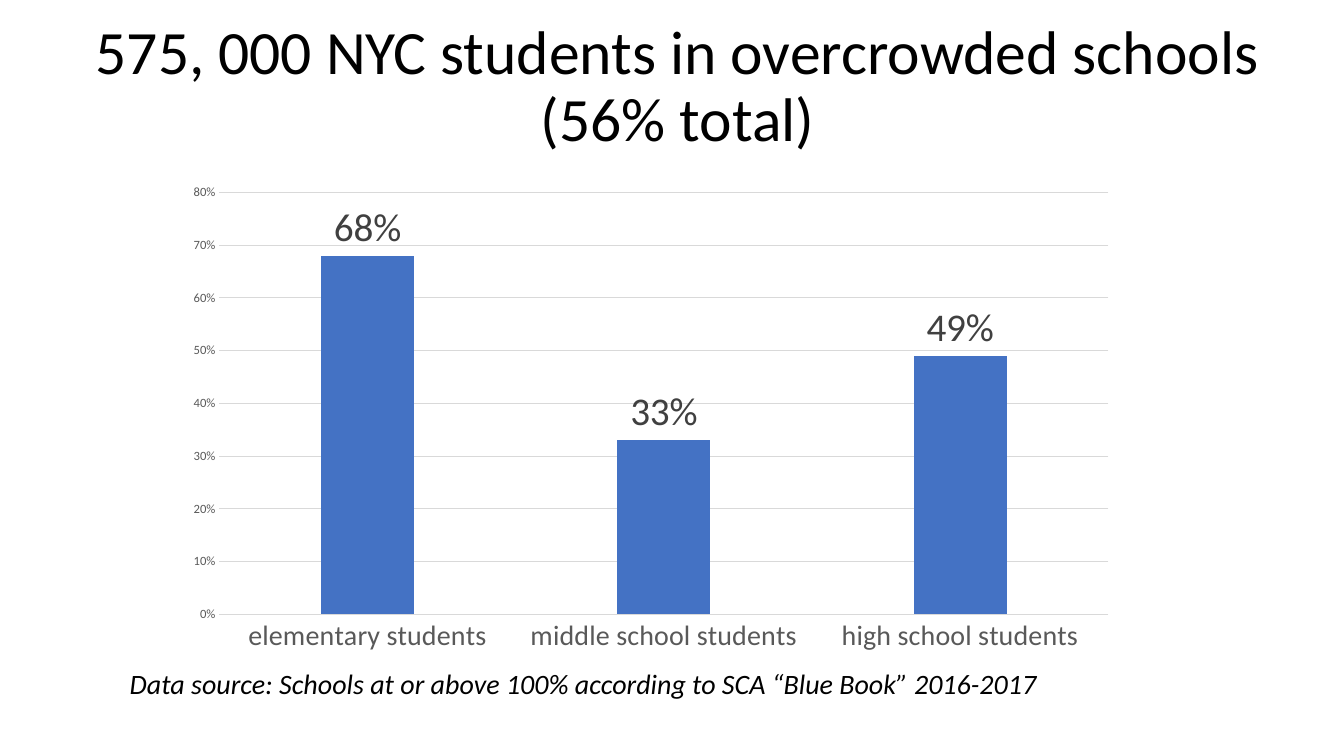
from pptx import Presentation
from pptx.chart.data import CategoryChartData
from pptx.dml.color import RGBColor
from pptx.enum.chart import XL_CHART_TYPE, XL_LABEL_POSITION, XL_TICK_MARK
from pptx.enum.shapes import MSO_SHAPE
from pptx.enum.text import MSO_ANCHOR, PP_ALIGN
from pptx.util import Cm, Pt

BLACK = RGBColor(0x00, 0x00, 0x00)
WHITE = RGBColor(0xFF, 0xFF, 0xFF)
BLUE = RGBColor(0x44, 0x72, 0xC4)
LABEL_GRAY = RGBColor(0x40, 0x40, 0x40)
AXIS_GRAY = RGBColor(0x59, 0x59, 0x59)
GRID_GRAY = RGBColor(0xD9, 0xD9, 0xD9)


class SlideBuilder:
    typeface = "Calibri"

    def __init__(self, slide):
        self.slide = slide

    def style_font(self, font, size, color):
        font.name = self.typeface
        font.size = Pt(size)
        font.color.rgb = color

    def style_line(self, line, color):
        line.color.rgb = color
        line.width = Pt(0.75)

    def add_title(self, lines, left, top, width, height):
        box = self.slide.shapes.add_shape(
            MSO_SHAPE.RECTANGLE, Cm(left), Cm(top), Cm(width), Cm(height))
        box.shadow.inherit = False
        box.fill.background()
        self.style_line(box.line, WHITE)
        frame = box.text_frame
        frame.word_wrap = True
        frame.vertical_anchor = MSO_ANCHOR.MIDDLE
        para = frame.paragraphs[0]
        para.alignment = PP_ALIGN.CENTER
        para.line_spacing = 0.9
        self.style_font(para.font, 44, BLACK)
        for index, line in enumerate(lines):
            if index:
                para.add_line_break()
            span = para.add_run()
            span.text = line

    def add_source(self, text, left, top, width, height):
        box = self.slide.shapes.add_textbox(Cm(left), Cm(top), Cm(width), Cm(height))
        frame = box.text_frame
        frame.word_wrap = True
        frame.vertical_anchor = MSO_ANCHOR.BOTTOM
        frame.margin_bottom = Cm(0.8)
        para = frame.paragraphs[0]
        para.text = text
        para.line_spacing = 1.2
        self.style_font(para.font, 20, BLACK)
        para.font.italic = True

    def add_column_chart(self, shares, left, top, width, height):
        data = CategoryChartData(number_format="0%")
        data.categories = list(shares)
        data.add_series("Series 1", list(shares.values()))
        chart = self.slide.shapes.add_chart(
            XL_CHART_TYPE.COLUMN_CLUSTERED,
            Cm(left), Cm(top), Cm(width), Cm(height), data).chart
        chart.has_legend = False
        chart.has_title = False
        self.style_font(chart.font, 10, BLACK)
        self.style_columns(chart.plots[0])
        self.style_axes(chart.category_axis, chart.value_axis)

    def style_columns(self, plot):
        plot.gap_width = 219
        plot.overlap = -27
        plot.vary_by_categories = False
        series = plot.series[0]
        series.format.fill.solid()
        series.format.fill.fore_color.rgb = BLUE
        labels = series.data_labels
        labels.show_value = True
        labels.position = XL_LABEL_POSITION.OUTSIDE_END
        labels.number_format = "0%"
        labels.number_format_is_linked = False
        self.style_font(labels.font, 28, LABEL_GRAY)

    def style_axes(self, category_axis, value_axis):
        for axis, size in ((category_axis, 20), (value_axis, 9)):
            axis.major_tick_mark = XL_TICK_MARK.NONE
            axis.minor_tick_mark = XL_TICK_MARK.NONE
            self.style_font(axis.tick_labels.font, size, AXIS_GRAY)
        self.style_line(category_axis.format.line, GRID_GRAY)
        value_axis.minimum_scale = 0
        value_axis.maximum_scale = 0.8
        value_axis.major_unit = 0.1
        value_axis.format.line.fill.background()
        value_axis.has_major_gridlines = True
        self.style_line(value_axis.major_gridlines.format.line, GRID_GRAY)
        value_axis.tick_labels.number_format = "0%"
        value_axis.tick_labels.number_format_is_linked = False


def main():
    deck = Presentation()
    deck.slide_width = Cm(33.87)
    deck.slide_height = Cm(19.05)
    page = SlideBuilder(deck.slides.add_slide(deck.slide_layouts[6]))
    page.add_title(
        ["575, 000 NYC students in overcrowded schools", "(56% total)"],
        0.31, 0.22, 33.55, 4.01)
    page.add_source(
        "Data source: Schools at or above 100% according to SCA “Blue Book” 2016-2017",
        3.02, 3.28, 28.52, 15.16)
    page.add_column_chart(
        {"elementary students": 0.68,
         "middle school students": 0.33,
         "high school students": 0.49},
        4.4, 4.42, 24.01, 12.28)
    deck.save("out.pptx")


if __name__ == "__main__":
    main()
